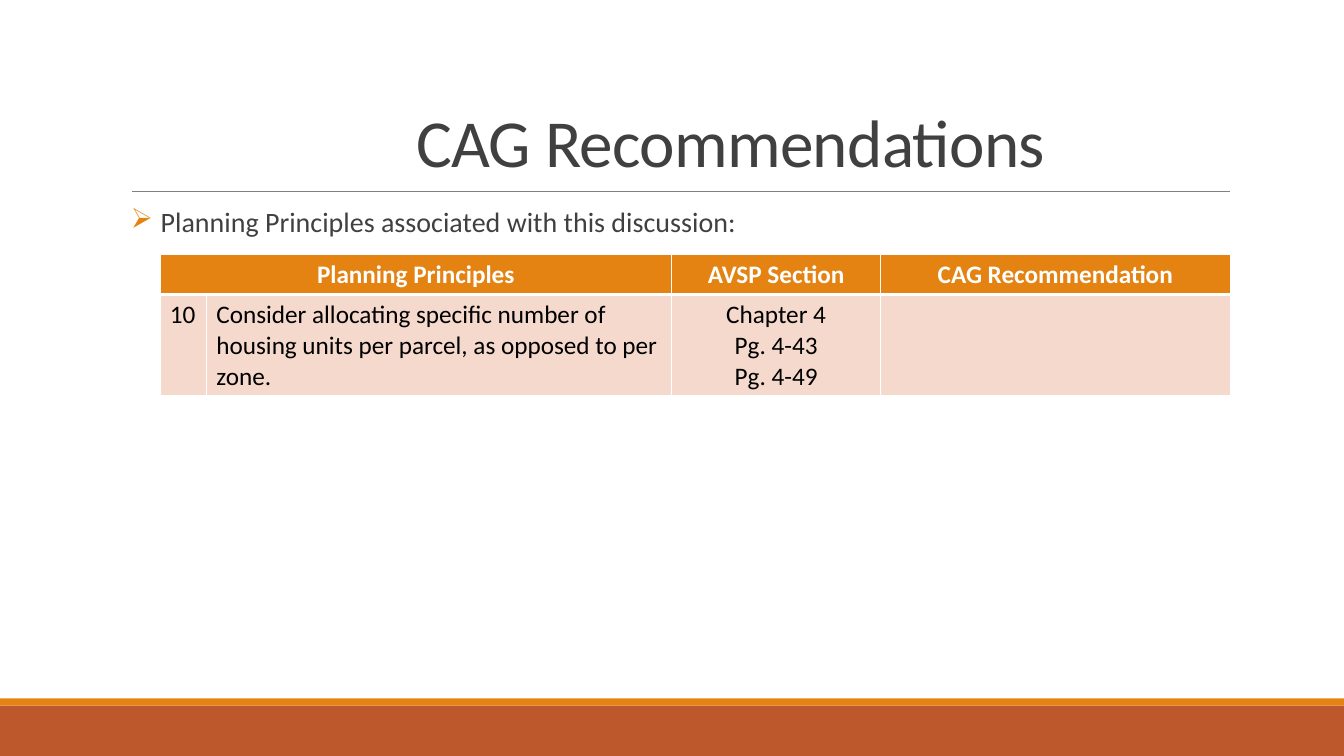
from lxml import etree
from pptx import Presentation
from pptx import util as u
from pptx.dml.color import RGBColor
from pptx.enum import shapes, text
from pptx.oxml import ns

TITLE = "CAG Recommendations"
INTRO = "Planning Principles associated with this discussion:"
HEADER = ["Planning Principles", "", "AVSP Section", "CAG Recommendation"]
PRINCIPLE = [
    "10",
    "Consider allocating specific number of housing units per parcel, as opposed to per zone.",
    "Chapter 4\nPg. 4-43\nPg. 4-49",
    "",
]
COLUMN_WIDTHS = [1.17, 11.73, 5.26, 8.81]
ROW_HEIGHTS = [1.02, 2.54]

ORANGE = RGBColor(0xE4, 0x83, 0x12)
RUST = RGBColor(0xBD, 0x58, 0x2C)
PEACH = RGBColor(0xF5, 0xD9, 0xCC)
CHARCOAL = RGBColor(0x40, 0x40, 0x40)
GREY = RGBColor(0x80, 0x80, 0x80)
WHITE = RGBColor(0xFF, 0xFF, 0xFF)
BLACK = RGBColor(0, 0, 0)

WIDTH, HEIGHT = 33.87, 19.05
RIGHT_EDGE = 31
BANDS = [(17.78, 1.27, RUST), (17.6, 0.18, ORANGE)]
LEFT, CENTER = text.PP_ALIGN.LEFT, text.PP_ALIGN.CENTER
HEADER_STYLE = {"size": u.Pt(18), "bold": True, "color": WHITE}
BODY_STYLE = {"size": u.Pt(18), "bold": False, "color": BLACK}


def set_font(font, style):
    font.name = "Calibri"
    for name, value in style.items():
        if name == "color":
            font.color.rgb = value
        else:
            setattr(font, name, value)


def add_element(parent, tag, **attributes):
    return etree.SubElement(parent, ns.qn(tag), attributes)


def add_text(page, left, top, width, height, wording, size, **frame_format):
    box = page.shapes.add_textbox(*map(u.Cm, (left, top, width, height)))
    frame = box.text_frame
    frame.word_wrap = True
    for name, value in frame_format.items():
        setattr(frame, name, value)
    para = frame.paragraphs[0]
    span = para.add_run()
    span.text = wording
    set_font(span.font, {"size": u.Pt(size), "color": CHARCOAL})
    return para, span


def fill_cell(cell, wording, style, align, fill, top_width, bottom_width):
    cell.text = wording
    for para in cell.text_frame.paragraphs:
        para.alignment = align
        set_font(para.font, style)
        for span in para.runs:
            set_font(span.font, style)
    properties = cell._tc.get_or_add_tcPr()
    for side, points in zip("LRTB", (1, 1, top_width, bottom_width)):
        line = add_element(properties, f"a:ln{side}", w=str(u.Pt(points)))
        add_element(add_element(line, "a:solidFill"), "a:srgbClr", val=str(WHITE))
    cell.fill.solid()
    cell.fill.fore_color.rgb = fill


def add_background(page):
    for top, height, color in BANDS:
        band = page.shapes.add_shape(
            shapes.MSO_SHAPE.RECTANGLE, 0, u.Cm(top), u.Cm(WIDTH), u.Cm(height))
        band.shadow.inherit = False
        band.fill.solid()
        band.fill.fore_color.rgb = color
        band.line.fill.background()
    rule = page.shapes.add_connector(
        shapes.MSO_CONNECTOR.STRAIGHT, *map(u.Cm, (3.33, 4.83, RIGHT_EDGE, 4.83)))
    rule.line.color.rgb = GREY
    rule.line.width = u.Pt(0.5)
    add_element(rule._element.spPr, "a:effectLst")


def add_principles(page):
    width = sum(COLUMN_WIDTHS)
    frame = page.shapes.add_table(
        2, len(COLUMN_WIDTHS),
        *map(u.Cm, (RIGHT_EDGE - width, 6.4, width, sum(ROW_HEIGHTS))))
    table = frame.table
    for column, size in zip(table.columns, COLUMN_WIDTHS):
        column.width = u.Cm(size)
    for row, size in zip(table.rows, ROW_HEIGHTS):
        row.height = u.Cm(size)
    for index, (heading, entry) in enumerate(zip(HEADER, PRINCIPLE)):
        fill_cell(table.cell(0, index), heading, HEADER_STYLE, CENTER, ORANGE, 1, 3)
        fill_cell(table.cell(1, index), entry, BODY_STYLE,
                  LEFT if index < 2 else CENTER, PEACH, 3, 1)
    table.cell(0, 0).merge(table.cell(0, 1))


def main():
    deck = Presentation()
    deck.slide_width, deck.slide_height = u.Cm(WIDTH), u.Cm(HEIGHT)
    page = deck.slides.add_slide(deck.slide_layouts[6])
    add_background(page)

    para, span = add_text(page, 10.24, 0.64, 20.76, 4.04, TITLE, 48,
                          vertical_anchor=text.MSO_ANCHOR.BOTTOM)
    para.line_spacing = 0.85
    span.font._element.set("spc", "-50")

    para, span = add_text(page, 3.3, 5.13, 27.7, 11.18, INTRO, 20,
                          margin_left=0, margin_right=0)
    properties = para._p.get_or_add_pPr()
    indent = u.Cm(0.75)
    properties.set("marL", str(indent))
    properties.set("indent", str(-indent))
    add_element(add_element(properties, "a:buClr"), "a:srgbClr", val=str(ORANGE))
    add_element(properties, "a:buChar", char="➢")
    para.line_spacing = 0.9
    para.space_after = u.Pt(2)

    add_principles(page)
    deck.save("out.pptx")


if __name__ == "__main__":
    main()
